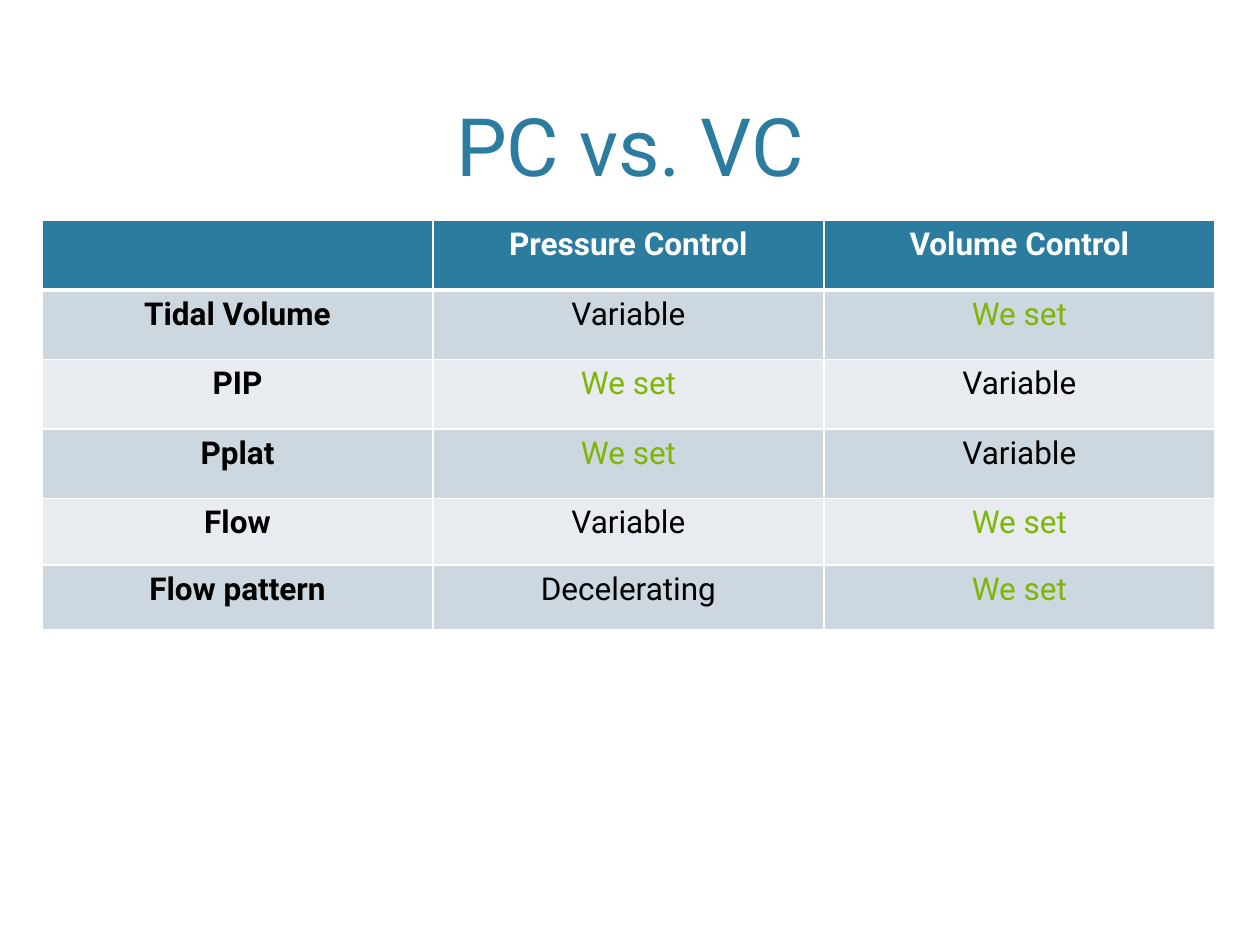
from pptx import Presentation
from pptx.dml.color import RGBColor
from pptx.enum.text import MSO_ANCHOR as Anchor, PP_ALIGN as Align
from pptx.oxml import parse_xml
from pptx.oxml.ns import nsdecls
from pptx.util import Pt

BLUE, GREEN, BLACK, WHITE = "2C7C9F", "7EB606", "000000", "FFFFFF"
BANDS = ["CDD7DF", "E8ECF0"]


def rgb(color):
    return RGBColor.from_string(color)


def write(tf, text, size, color, bold=False):
    p = tf.paragraphs[0]
    p.alignment = Align.CENTER
    r = p.add_run()
    r.text = text
    r.font.color.rgb = rgb(color)
    for name, value in {"name": "Roboto", "size": Pt(size), "bold": bold}.items():
        setattr(r.font, name, value)


prs = Presentation()
prs.slide_width, prs.slide_height = Pt(720), Pt(540)
s = prs.slides.add_slide(prs.slide_layouts[6])

# Title
tf = s.shapes.add_textbox(Pt(43.2), Pt(8.64), Pt(633.6), Pt(105.12)).text_frame
tf.word_wrap = True
tf.vertical_anchor = Anchor.BOTTOM
write(tf, "PC vs. VC", 46, BLUE)

# Comparison table
rows = [
    ["", "Pressure Control", "Volume Control"],
    ["Tidal Volume", "Variable", "We set"],
    ["PIP", "We set", "Variable"],
    ["Pplat", "We set", "Variable"],
    ["Flow", "Variable", "We set"],
    ["Flow pattern", "Decelerating", "We set"],
]
heights = [39.7, 39.7, 39.7, 39.7, 38.2, 36.7]
table = s.shapes.add_table(len(rows), 3, Pt(24), Pt(126), Pt(670.2), Pt(sum(heights))).table
for col in table.columns:
    col.width = Pt(223.4)
margins = {"margin_left": Pt(15), "margin_right": Pt(15),
           "margin_top": Pt(3.6), "margin_bottom": Pt(3.6)}

for i, (row, height) in enumerate(zip(rows, heights)):
    table.rows[i].height = Pt(height)
    for j, text in enumerate(row):
        cell = table.cell(i, j)
        for name, value in margins.items():
            setattr(cell, name, value)

        # White borders, thicker under the header
        for side in "LRTB":
            width = 3 if (i, side) in [(0, "B"), (1, "T")] else 1
            cell._tc.get_or_add_tcPr().append(parse_xml(
                f'<a:ln{side} {nsdecls("a")} w="{Pt(width)}"><a:solidFill>'
                f'<a:srgbClr val="{WHITE}"/></a:solidFill></a:ln{side}>'))

        # Header fill and alternating bands
        cell.fill.solid()
        cell.fill.fore_color.rgb = rgb(BANDS[(i - 1) % 2] if i else BLUE)

        if text:
            color = WHITE if i == 0 else GREEN if text == "We set" else BLACK
            write(cell.text_frame, text, 18, color, bold=i == 0 or j == 0)

prs.save("out.pptx")
